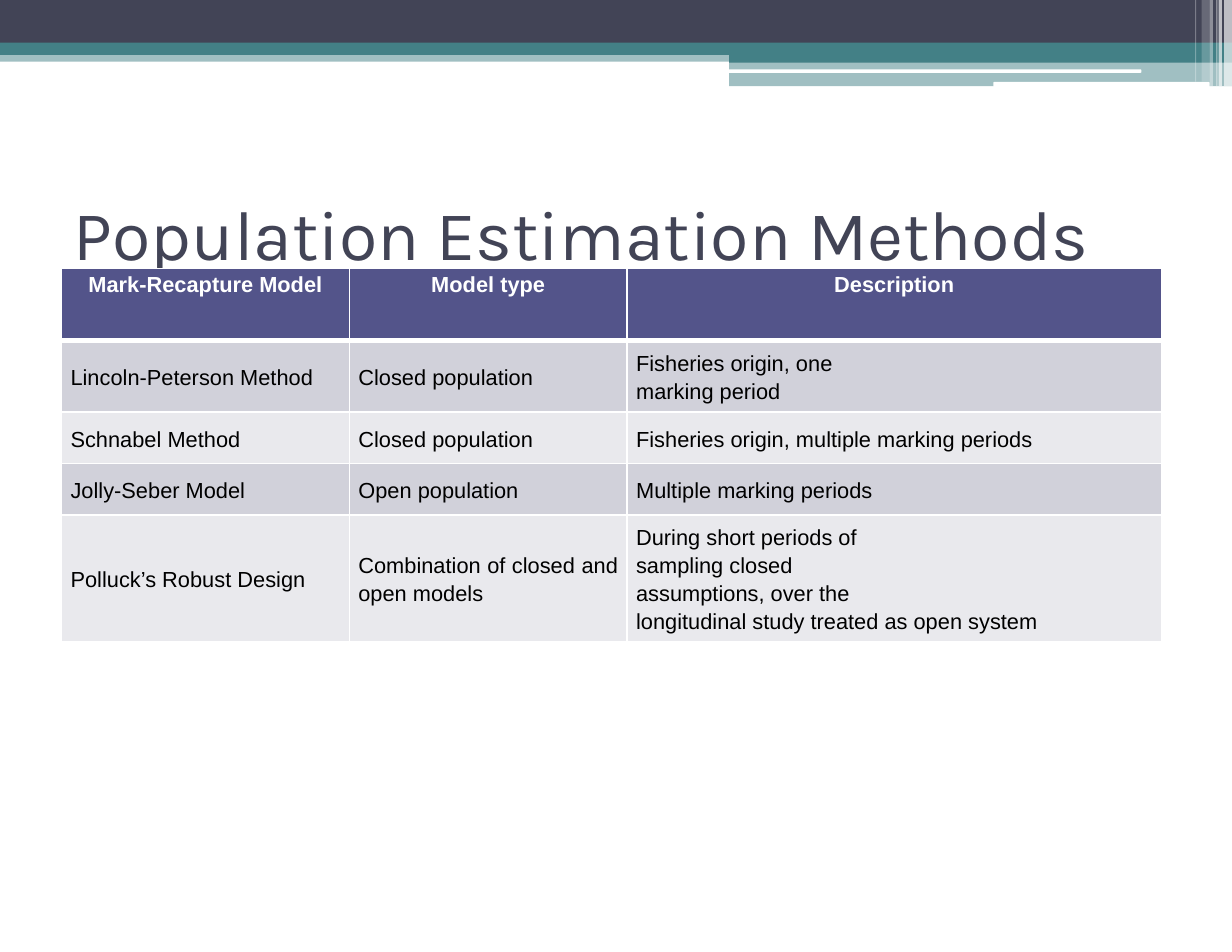
import dataclasses

import pptx
import pptx.dml.color
import pptx.enum.shapes
import pptx.enum.text
import pptx.oxml
import pptx.oxml.ns
import pptx.util
from pptx.util import Inches


@dataclasses.dataclass(frozen=True)
class Theme:
    navy: str = "424456"
    teal: str = "438086"
    white: str = "FFFFFF"
    black: str = "000000"
    header: str = "53548A"
    odd_row: str = "D1D1DA"
    even_row: str = "E9E9ED"
    title_font: str = "Karla"
    table_font: str = "Arial"
    title_size: int = 45
    table_size: int = 14
    line_spacing: int = 18


theme = Theme()
rgb = pptx.dml.color.RGBColor.from_string
ALIGN = pptx.enum.text.PP_ALIGN
ANCHOR = pptx.enum.text.MSO_ANCHOR
SHAPE = pptx.enum.shapes.MSO_SHAPE
NS = pptx.oxml.ns.nsdecls("a")


def style_run(run, font, size, color, bold=False):
    run.font.name = font
    run.font.size = pptx.util.Pt(size)
    run.font.color.rgb = rgb(color)
    run.font.bold = bold


def add_border(cell, position, edge, points):
    cell._tc.get_or_add_tcPr().insert(position, pptx.oxml.parse_xml(
        f'<a:{edge} {NS} w="{pptx.util.Pt(points)}"><a:solidFill>'
        f'<a:srgbClr val="{theme.white}"/></a:solidFill></a:{edge}>'))


presentation = pptx.Presentation()
presentation.slide_width = Inches(11)
presentation.slide_height = Inches(8.5)
slide = presentation.slides.add_slide(presentation.slide_layouts[5])

# Title
title = slide.shapes.title
title.left, title.top = Inches(0.55), Inches(1.42)
title.width, title.height = Inches(9.9), Inches(1.32)
title_frame = title.text_frame
title_frame.word_wrap = True
title_frame.auto_size = pptx.enum.text.MSO_AUTO_SIZE.NONE
title_frame.vertical_anchor = ANCHOR.MIDDLE
title_frame.margin_left = title_frame.margin_right = Inches(0.11)
title_frame.margin_top = title_frame.margin_bottom = Inches(0.06)
heading = title_frame.paragraphs[0]
heading.alignment = ALIGN.LEFT
heading_run = heading.add_run()
heading_run.text = "Population Estimation Methods"
style_run(heading_run, theme.title_font, theme.title_size, theme.navy)

# Top band: preset, left, top, width, height, colour, opacity in percent
band = [
    (SHAPE.RECTANGLE, 0, 0.45, 11, 0.1, theme.teal, 50),
    (SHAPE.RECTANGLE, 0, 0, 11, 0.39, theme.navy, 100),
    (SHAPE.RECTANGLE, 0, 0.38, 11, 0.11, theme.teal, 100),
    (SHAPE.RECTANGLE, 6.51, 0.45, 4.49, 0.11, theme.teal, 100),
    (SHAPE.RECTANGLE, 6.51, 0.55, 4.49, 0.22, theme.teal, 50),
    (SHAPE.ROUNDED_RECTANGLE, 6.5, 0.62, 3.69, 0.03, theme.white, 100),
    (SHAPE.ROUNDED_RECTANGLE, 8.87, 0.73, 1.93, 0.05, theme.white, 100),
]

# Translucent stripes at the right end: left, width, height, opacity
stripes = [
    (10.93, 0.07, 0.77, 65), (10.88, 0.03, 0.77, 65), (10.86, 0.01, 0.77, 60),
    (10.8, 0.03, 0.77, 40), (10.73, 0.07, 0.73, 20), (10.67, 0.01, 0.73, 30),
]
band += [(SHAPE.RECTANGLE, left, 0, width, height, theme.white, opacity)
         for left, width, height, opacity in stripes]

for preset, left, top, width, height, color, opacity in band:
    bar = slide.shapes.add_shape(
        preset, Inches(left), Inches(top), Inches(width), Inches(height))
    bar.shadow.inherit = False
    bar.line.fill.background()
    bar.fill.solid()
    bar.fill.fore_color.rgb = rgb(color)
    if opacity < 100:
        bar_color = bar._element.spPr.find(".//" + pptx.oxml.ns.qn("a:srgbClr"))
        bar_color.append(pptx.oxml.parse_xml(
            f'<a:alpha {NS} val="{opacity * 1000}"/>'))

# Table of mark-recapture models; a line break starts a new paragraph
models = [
    ("Mark-Recapture Model", "Model type", "Description"),
    ("Lincoln-Peterson Method", "Closed population",
     "Fisheries origin, one\nmarking period"),
    ("Schnabel Method", "Closed population",
     "Fisheries origin, multiple marking periods"),
    ("Jolly-Seber Model", "Open population", "Multiple marking periods"),
    ("Polluck’s Robust Design", "Combination of closed and open models",
     "During short periods of\nsampling closed\nassumptions, over the\n"
     "longitudinal study treated as open system"),
]
column_widths = [2.57, 2.48, 4.77]
row_heights = [0.64, 0.64, 0.46, 0.46, 1.13]

model_table = slide.shapes.add_table(
    len(models), len(column_widths), Inches(0.55), Inches(2.4),
    Inches(sum(column_widths)), Inches(sum(row_heights))).table
for column, width in zip(model_table.columns, column_widths):
    column.width = Inches(width)
for row, height in zip(model_table.rows, row_heights):
    row.height = Inches(height)

for row_index, model in enumerate(models):
    is_header = row_index == 0
    if is_header:
        row_fill = theme.header
    else:
        row_fill = theme.odd_row if row_index % 2 else theme.even_row
    for column_index, entry in enumerate(model):
        cell = model_table.cell(row_index, column_index)
        cell.fill.solid()
        cell.fill.fore_color.rgb = rgb(row_fill)
        cell.margin_left = cell.margin_right = Inches(0.08)
        cell.margin_top = cell.margin_bottom = 0
        cell.vertical_anchor = ANCHOR.TOP if is_header else ANCHOR.MIDDLE
        for position, edge in enumerate(("lnL", "lnR", "lnT", "lnB")):
            add_border(cell, position, edge,
                       3 if is_header and edge == "lnB" else 1)
        for line_index, line in enumerate(entry.split("\n")):
            frame = cell.text_frame
            paragraph = frame.add_paragraph() if line_index else frame.paragraphs[0]
            paragraph.alignment = ALIGN.CENTER if is_header else ALIGN.JUSTIFY
            paragraph.line_spacing = pptx.util.Pt(theme.line_spacing)
            run = paragraph.add_run()
            run.text = line
            style_run(run, theme.table_font, theme.table_size,
                      theme.white if is_header else theme.black, is_header)

presentation.save("out.pptx")
